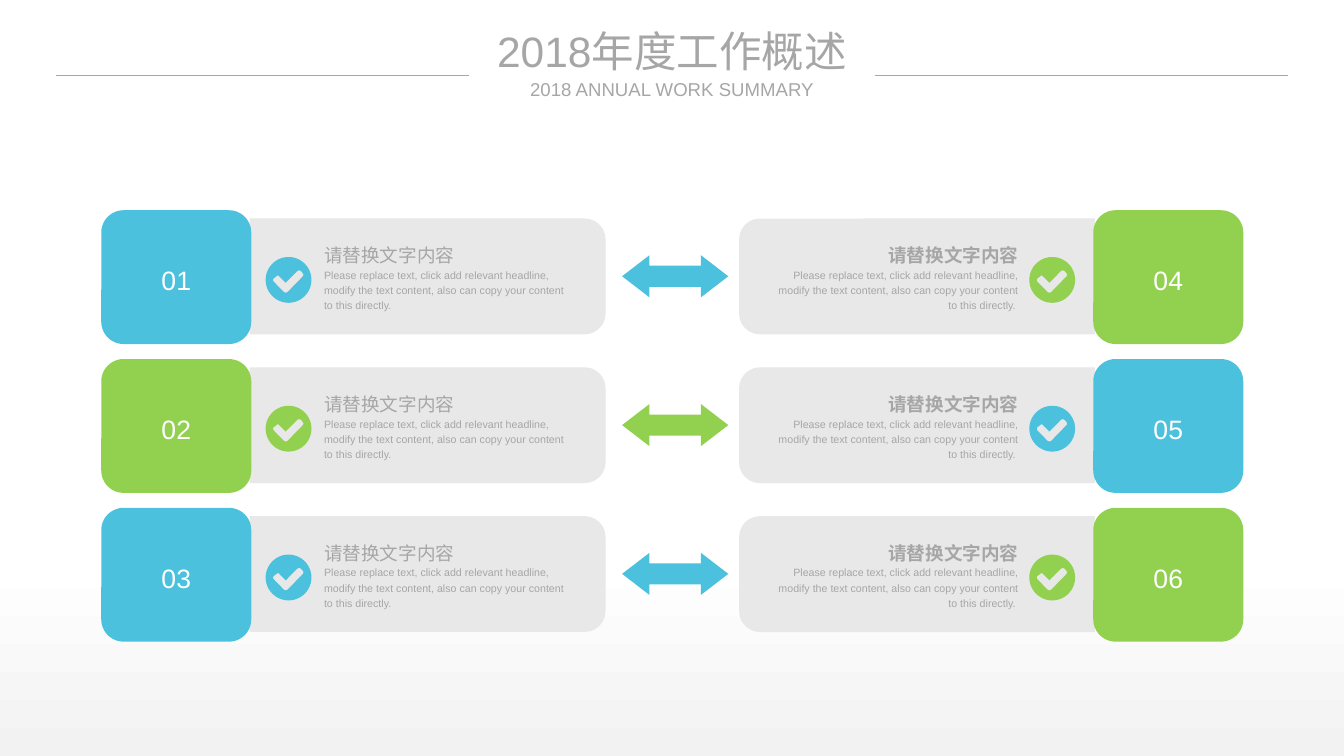
from math import cos, pi, sin

from lxml.etree import SubElement
from pptx import Presentation
from pptx.dml.color import RGBColor
from pptx.enum.shapes import MSO_CONNECTOR, MSO_SHAPE
from pptx.enum.text import MSO_ANCHOR, MSO_AUTO_SIZE, PP_ALIGN
from pptx.oxml.ns import qn
from pptx.util import Pt

COLORS = {
    "blue": "4BC1DD",
    "green": "92D050",
    "panel": "E6E6E6",
    "text": "A6A6A6",
    "white": "FFFFFF",
    "floor": "F2F2F2",
}
FONT = "Arial"
SLIDE_W, SLIDE_H = 1012.3, 569.5
CARD_W, CARD_H = 379.8, 100.8
ROW_TOP, ROW_PITCH = 158.4, 112.1
LEFT_X, RIGHT_X = 76.3, 556.7
HEADING = "请替换文字内容"
BODY = (
    "Please replace text, click add relevant headline, modify the text content, "
    "also can copy your content to this directly."
)
TICK = [
    (28, 12.2), (26.6, 10.6), (25.2, 10), (23.8, 10.6), (15.1, 19.4), (10.1, 14.4),
    (9.2, 13.8), (8.6, 14.2), (5.8, 16.4), (5.6, 17.4), (5.9, 18.4), (13.7, 26.4),
    (15.1, 27), (16.5, 26.4), (28, 14.6), (28.6, 13.4),
]


def rgb(name):
    return RGBColor.from_string(COLORS[name])


def paint(sp, color):
    sp.shadow.inherit = False
    sp.fill.solid()
    sp.fill.fore_color.rgb = rgb(color)
    sp.line.fill.background()


def add_preset(s, kind, x, y, w, h, color, adjustments=()):
    sp = s.shapes.add_shape(kind, Pt(x), Pt(y), Pt(w), Pt(h))
    for i, value in enumerate(adjustments):
        sp.adjustments[i] = value
    paint(sp, color)
    return sp


def prepare_frame(sp, anchor):
    tf = sp.text_frame
    tf.margin_left = tf.margin_right = tf.margin_top = tf.margin_bottom = 0
    tf.word_wrap = True
    tf.vertical_anchor = anchor
    return tf


def style_run(r, size, color, bold=False):
    r.font.name = FONT
    r.font.size = Pt(size)
    r.font.bold = bold
    r.font.color.rgb = rgb(color)


def write_line(sp, text, size, color):
    tf = prepare_frame(sp, MSO_ANCHOR.MIDDLE)
    tf.text = text
    p = tf.paragraphs[0]
    p.alignment = PP_ALIGN.CENTER
    style_run(p.runs[0], size, color)
    return tf


def add_background(s):
    fill = s.background.fill
    fill.gradient()
    fill.gradient_angle = 90
    for stop, color, position in zip(fill.gradient_stops, ("floor", "white"), (0, 0.26)):
        stop.color.rgb = rgb(color)
        stop.position = position


def add_header(s, x, y, w):
    title = s.shapes.title
    title.left, title.top, title.width, title.height = Pt(x + 308), Pt(y), Pt(w - 616), Pt(38.9)
    tf = write_line(title, "2018年度工作概述", 32, "text")
    tf.auto_size = MSO_AUTO_SIZE.NONE
    tf.paragraphs[0].line_spacing = 1.0
    subtitle = s.shapes.add_textbox(Pt(x + 353), Pt(y + 39.6), Pt(w - 706), Pt(17.3))
    write_line(subtitle, "2018 ANNUAL WORK SUMMARY", 14, "text")
    for rule_x in (x, x + w - 311):
        rule = s.shapes.add_connector(
            MSO_CONNECTOR.STRAIGHT, Pt(rule_x), Pt(y + 38.2), Pt(rule_x + 311), Pt(y + 38.2))
        rule.line.color.rgb = rgb("text")
        rule.line.width = Pt(1)
        SubElement(rule._element.spPr, qn("a:effectLst"))


def add_panel(s, x, y, w, h, mirrored):
    panel = add_preset(s, MSO_SHAPE.ROUND_2_SAME_RECTANGLE, x + (w - h) / 2, y + (h - w) / 2,
                       h, w, "panel", (0.18, 0))
    panel.rotation = 270 if mirrored else 90
    color = panel._element.spPr.find(qn("a:solidFill"))[0]
    SubElement(color, qn("a:alpha")).set("val", "90000")


def add_check(s, x, y, size, color):
    radius = size / 2
    angles = [2 * pi * i / 72 for i in range(72)]
    circle = [(radius + radius * cos(a), radius + radius * sin(a)) for a in angles]
    rim, tick = ([(Pt(x + dx), Pt(y + dy)) for dx, dy in pts] for pts in (circle, TICK))
    builder = s.shapes.build_freeform(*rim[0])
    builder.add_line_segments(rim[1:])
    builder.move_to(*tick[0])
    builder.add_line_segments(tick[1:])
    paint(builder.convert_to_shape(), color)


def add_copy(s, x, y, w, h, mirrored):
    box = s.shapes.add_textbox(Pt(x), Pt(y), Pt(w), Pt(h))
    tf = prepare_frame(box, MSO_ANCHOR.TOP)
    tf.auto_size = MSO_AUTO_SIZE.SHAPE_TO_FIT_TEXT
    p = tf.paragraphs[0]
    p.text = f"{HEADING}\v{BODY} " if mirrored else f"{HEADING}\v{BODY}"
    p.alignment = PP_ALIGN.RIGHT if mirrored else PP_ALIGN.LEFT
    p.line_spacing = 1.2
    heading, body = p.runs
    style_run(heading, 14, "text", mirrored)
    style_run(body, 8, "text")


def add_card(s, x, y, w, h, number, color, mirrored):
    def place(dx, part_w):
        return x + w - dx - part_w if mirrored else x + dx

    add_panel(s, place(111.8, 268), y + 6.2, 268, 87.3, mirrored)
    add_copy(s, place(169.2 if mirrored else 167.8, 185.8), y + 22, 185.8, 55.4, mirrored)
    add_check(s, place(126.7 if mirrored else 123.8, 34.5), y + 35.2, 34.5, color)
    badge = add_preset(s, MSO_SHAPE.ROUNDED_RECTANGLE, place(0, 113), y, 113, h, color)
    tf = write_line(badge, number, 20, "white")
    tf.paragraphs[0].line_spacing = 1.2


def add_arrow(s, x, y, color):
    add_preset(s, MSO_SHAPE.LEFT_RIGHT_ARROW, x, y, 80, 31.7, color, (0.5, 0.65))


def build_summary(prs):
    s = prs.slides.add_slide(prs.slide_layouts[5])
    add_background(s)
    add_header(s, 42.5, 18.7, 927.3)
    pairs = [("blue", "green"), ("green", "blue"), ("blue", "green")]
    for row, (left, right) in enumerate(pairs):
        y = ROW_TOP + row * ROW_PITCH
        add_card(s, LEFT_X, y, CARD_W, CARD_H, f"{row + 1:02}", left, False)
        add_card(s, RIGHT_X, y, CARD_W, CARD_H, f"{row + 4:02}", right, True)
        add_arrow(s, 468.6, y + 33.9, left)


def main():
    prs = Presentation()
    prs.slide_width, prs.slide_height = Pt(SLIDE_W), Pt(SLIDE_H)
    build_summary(prs)
    prs.save("out.pptx")


if __name__ == "__main__":
    main()
